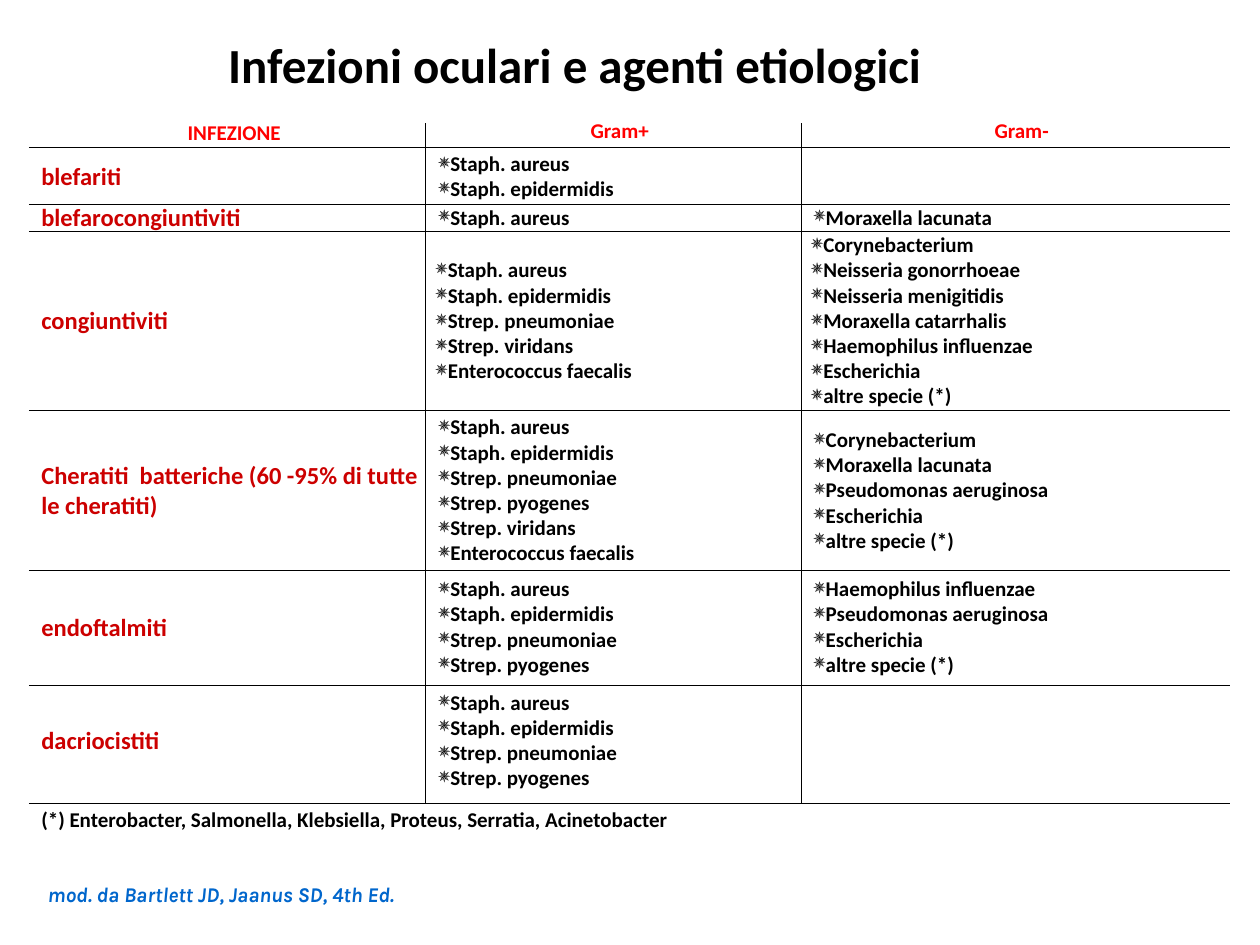
from lxml import etree
from pptx import Presentation
from pptx.dml.color import RGBColor
from pptx.enum.shapes import MSO_CONNECTOR
from pptx.enum.text import MSO_ANCHOR, PP_ALIGN
from pptx.oxml.ns import qn
from pptx.util import Inches, Pt

LEFT, CENTER = PP_ALIGN.LEFT, PP_ALIGN.CENTER
MIDDLE, BOTTOM = MSO_ANCHOR.MIDDLE, MSO_ANCHOR.BOTTOM
STRAIGHT = MSO_CONNECTOR.STRAIGHT

BLACK = RGBColor(0x00, 0x00, 0x00)
RED = RGBColor(0xFF, 0x00, 0x00)
DARK_RED = RGBColor(0xCC, 0x00, 0x00)
BLUE = RGBColor(0x00, 0x66, 0xCC)

TABLE_LEFT, TABLE_RIGHT = 0.23, 9.76
TABLE_TOP, TABLE_BOTTOM = 0.98, 6.38
COLUMNS = [(0.23, 3.16), (3.38, 2.98), (6.36, 3.4)]
ROW_LINES = [1.17, 1.62, 1.84, 3.26, 4.53, 5.44, TABLE_BOTTOM]
HEADERS = [("INFEZIONE", MIDDLE), ("Gram+", BOTTOM), ("Gram-", BOTTOM)]

AUREUS = "Staph. aureus"
STAPH = [AUREUS, "Staph. epidermidis"]
STREP = ["Strep. pneumoniae", "Strep. pyogenes"]
VIRIDANS = ["Strep. viridans", "Enterococcus faecalis"]
OTHERS = ["Escherichia", "altre specie (*)"]

ROWS = [
    ("blefariti", 1.19, 0.41, 0, STAPH, []),
    ("blefarocongiuntiviti", 1.58, 0.28, 0, [AUREUS], ["Moraxella lacunata"]),
    ("congiuntiviti", 1.92, 1.24, -0.02,
     STAPH + ["Strep. pneumoniae"] + VIRIDANS,
     ["Corynebacterium", "Neisseria gonorrhoeae", "Neisseria menigitidis",
      "Moraxella catarrhalis", "Haemophilus influenzae"] + OTHERS),
    ("Cheratiti  batteriche (60 -95% di tutte le cheratiti)", 3.26, 1.25, 0,
     STAPH + STREP + VIRIDANS,
     ["Corynebacterium", "Moraxella lacunata", "Pseudomonas aeruginosa"] + OTHERS),
    ("endoftalmiti", 4.6, 0.74, 0, STAPH + STREP,
     ["Haemophilus influenzae", "Pseudomonas aeruginosa"] + OTHERS),
    ("dacriocistiti", 5.5, 0.74, 0, STAPH + STREP, []),
]


def style(p, size, color, align=LEFT, name="Calibri", italic=False):
    p.alignment = align
    p.font.name = name
    p.font.size = Pt(size)
    p.font.bold = True
    p.font.italic = italic
    p.font.color.rgb = color


def add_bullet(p):
    pPr = p._p.get_or_add_pPr()
    pPr.set("marL", "0")
    pPr.set("indent", "0")
    bullet = etree.Element(qn("a:buChar"), char="✵")
    pPr.insert_element_before(bullet, "a:tabLst", "a:defRPr", "a:extLst")


def add_cell(slide, box, lines, size=12, color=BLACK, align=LEFT,
             anchor=MIDDLE, bullets=False):
    tf = slide.shapes.add_textbox(*map(Inches, box)).text_frame
    tf.word_wrap = True
    tf.vertical_anchor = anchor
    tf.margin_left, tf.margin_right = Inches(0.1), 0
    tf.margin_top = tf.margin_bottom = Inches(0.04)
    for i, line in enumerate(lines):
        p = tf.paragraphs[0] if i == 0 else tf.add_paragraph()
        p.text = line
        style(p, size, color, align)
        if bullets:
            add_bullet(p)


def add_rule(slide, x1, y1, x2, y2):
    line = slide.shapes.add_connector(STRAIGHT, *map(Inches, (x1, y1, x2, y2)))
    line.line.color.rgb = BLACK
    line.line.width = Pt(0.5)
    etree.SubElement(line._element.spPr, qn("a:effectLst"))


def add_title(slide, text):
    title = slide.shapes.title
    title.left, title.top = Inches(1.06), Inches(0.21)
    title.width, title.height = Inches(7), Inches(0.59)
    tf = title.text_frame
    tf.text = text
    tf.vertical_anchor = MIDDLE
    style(tf.paragraphs[0], 28, BLACK, CENTER)


def add_headers(slide):
    for (left, width), (text, anchor) in zip(COLUMNS, HEADERS):
        add_cell(slide, (left, 0.93, width, 0.24), [text], color=RED,
                 align=CENTER, anchor=anchor)


def add_row(slide, infection, top, height, shift, *agents):
    left, width = COLUMNS[0]
    add_cell(slide, (left, top, width, height), [infection], 14, DARK_RED)
    for (left, width), names in zip(COLUMNS[1:], agents):
        if names:
            add_cell(slide, (left + shift, top, width, height), names, bullets=True)


def add_grid(slide):
    for y in ROW_LINES:
        add_rule(slide, TABLE_LEFT, y, TABLE_RIGHT, y)
    for x, _ in COLUMNS[1:]:
        add_rule(slide, x, TABLE_TOP, x, TABLE_BOTTOM)


def add_source(slide, text):
    box = map(Inches, (0.12, 7, 3.27, 0.2))
    tf = slide.shapes.add_textbox(*box).text_frame
    tf.word_wrap = False
    tf.margin_left = tf.margin_right = tf.margin_top = tf.margin_bottom = 0
    p = tf.paragraphs[0]
    p.text = text
    style(p, 12, BLUE, CENTER, "Karla", italic=True)


def main():
    prs = Presentation()
    prs.slide_width, prs.slide_height = Inches(10), Inches(7.5)
    slide = prs.slides.add_slide(prs.slide_layouts[5])
    add_title(slide, "Infezioni oculari e agenti etiologici")
    add_headers(slide)
    for row in ROWS:
        add_row(slide, *row)
    add_cell(slide, (TABLE_LEFT, TABLE_BOTTOM, TABLE_RIGHT - TABLE_LEFT, 0.24),
             ["(*) Enterobacter, Salmonella, Klebsiella, Proteus, Serratia, Acinetobacter"])
    add_grid(slide)
    add_source(slide, "mod. da Bartlett JD, Jaanus SD, 4th Ed.")
    prs.save("out.pptx")


if __name__ == "__main__":
    main()
